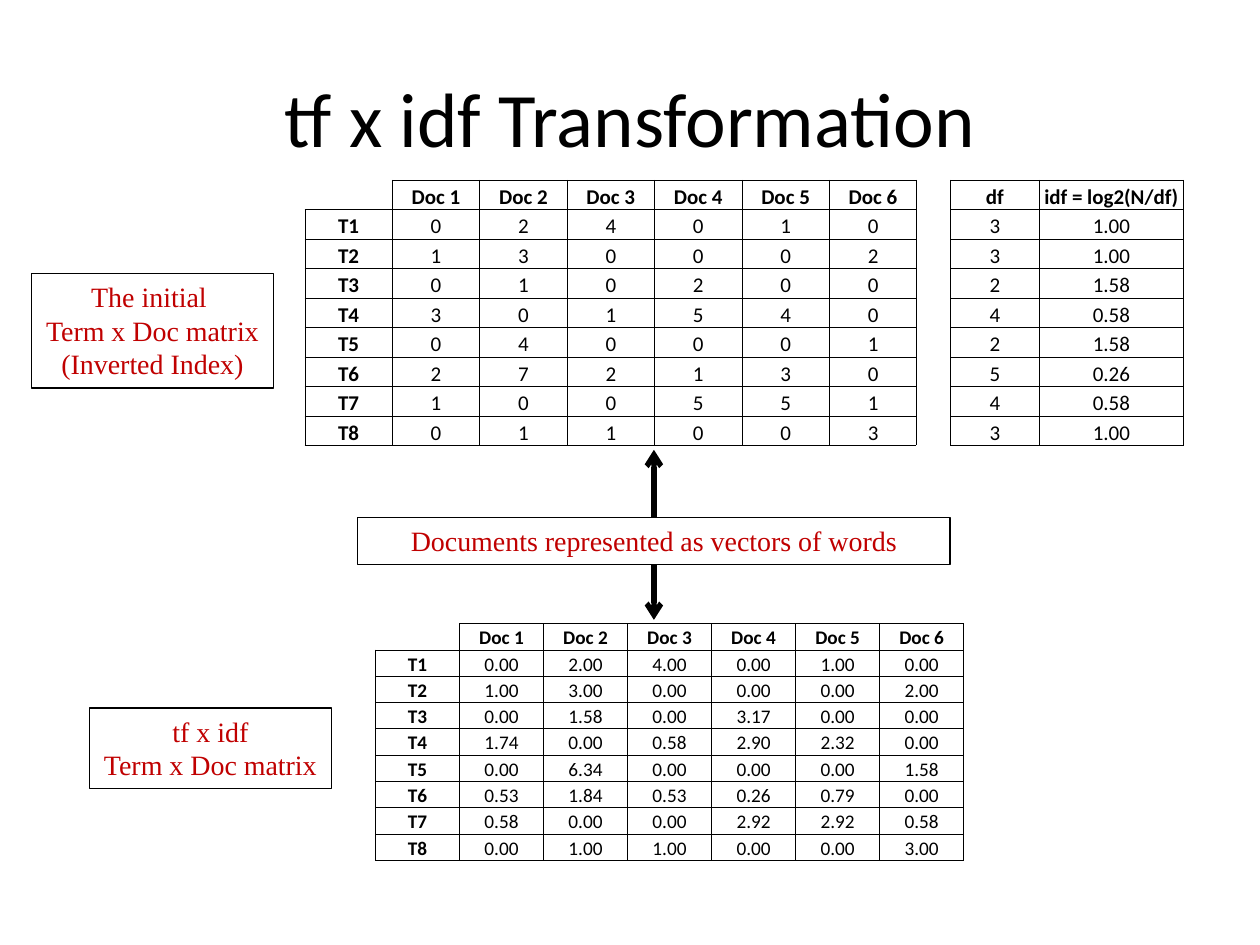
from lxml import etree
from pptx import Presentation
from pptx.dml.color import RGBColor
from pptx.enum import shapes, text
from pptx.oxml.ns import qn
from pptx.util import Inches, Pt

HUES = {"ink": "000000", "paper": "FFFFFF", "note": "C00000"}

COUNTS = """,Doc 1,Doc 2,Doc 3,Doc 4,Doc 5,Doc 6,,df,idf = log2(N/df)
T1,0,2,4,0,1,0,,3,1.00
T2,1,3,0,0,0,2,,3,1.00
T3,0,1,0,2,0,0,,2,1.58
T4,3,0,1,5,4,0,,4,0.58
T5,0,4,0,0,0,1,,2,1.58
T6,2,7,2,1,3,0,,5,0.26
T7,1,0,0,5,5,1,,4,0.58
T8,0,1,1,0,0,3,,3,1.00"""

WEIGHTS = """,Doc 1,Doc 2,Doc 3,Doc 4,Doc 5,Doc 6
T1,0.00,2.00,4.00,0.00,1.00,0.00
T2,1.00,3.00,0.00,0.00,0.00,2.00
T3,0.00,1.58,0.00,3.17,0.00,0.00
T4,1.74,0.00,0.58,2.90,2.32,0.00
T5,0.00,6.34,0.00,0.00,0.00,1.58
T6,0.53,1.84,0.53,0.26,0.79,0.00
T7,0.58,0.00,0.00,2.92,2.92,0.58
T8,0.00,1.00,1.00,0.00,0.00,3.00"""


def style(font, face, size, hue, bold=False):
    font.name, font.size, font.bold = face, Pt(size), bold
    font.color.rgb = RGBColor.from_string(HUES[hue])


def add_title(slide, box, words):
    title = slide.shapes.title
    title.left, title.top, title.width, title.height = map(Inches, box)
    frame = title.text_frame
    frame.text = words
    frame.vertical_anchor = text.MSO_ANCHOR.MIDDLE
    frame.paragraphs[0].alignment = text.PP_ALIGN.CENTER
    style(frame.paragraphs[0].runs[0].font, "Calibri", 44, "ink")


def edge_hues(row, col, last, blank):
    """Give the hue of each cell edge; None means no line."""
    hues = dict.fromkeys("LRTB", "ink")
    if blank and col == 0:
        hues.update(L="paper", T="paper")
    elif blank:
        hues.update(T=None if row else "paper",
                    B="paper" if row == last else None)
    return hues


def draw_edges(cell, hues):
    props = cell._tc.get_or_add_tcPr()
    for side, hue in hues.items():
        line = etree.SubElement(props, qn(f"a:ln{side}"), w=str(Pt(0.5)))
        if hue:
            fill = etree.SubElement(line, qn("a:solidFill"))
            etree.SubElement(fill, qn("a:srgbClr"), val=HUES[hue])
        else:
            etree.SubElement(line, qn("a:noFill"))


def fill_cell(cell, words, size, bold):
    cell.margin_left = cell.margin_right = cell.margin_top = Inches(0.01)
    cell.margin_bottom = 0
    cell.vertical_anchor = text.MSO_ANCHOR.BOTTOM
    cell.fill.background()
    para = cell.text_frame.paragraphs[0]
    para.alignment = text.PP_ALIGN.CENTER
    if words:
        para.text = words
        style(para.runs[0].font, "Calibri", size, "ink", bold)
    else:
        # Keeps the row from growing to the default text size
        etree.SubElement(para._p, qn("a:endParaRPr"), sz=str(size * 100))


def add_matrix(slide, box, data, widths, size):
    rows = [line.split(",") for line in data.splitlines()]
    last = len(rows) - 1
    table = slide.shapes.add_table(
        len(rows), len(widths), *map(Inches, box)).table
    table.first_row = table.horz_banding = False
    for col, width in zip(table.columns, widths):
        col.width = Inches(width)
    for r, row in enumerate(rows):
        table.rows[r].height = Inches(box[3] / len(rows))
        for c, words in enumerate(row):
            cell = table.cell(r, c)
            draw_edges(cell, edge_hues(r, c, last, not words))
            fill_cell(cell, words, size, r == 0 or c == 0)


def add_note(slide, box, words, wrap=False):
    note = slide.shapes.add_shape(
        shapes.MSO_SHAPE.RECTANGLE, *map(Inches, box))
    note.shadow.inherit = False
    note.fill.background()
    note.line.color.rgb = RGBColor.from_string(HUES["ink"])
    note.line.width = Pt(0.75)
    frame = note.text_frame
    frame.text = words
    frame.word_wrap = wrap
    frame.auto_size = text.MSO_AUTO_SIZE.SHAPE_TO_FIT_TEXT
    frame.vertical_anchor = text.MSO_ANCHOR.TOP
    para = frame.paragraphs[0]
    para.alignment = text.PP_ALIGN.CENTER
    for run in para.runs:
        style(run.font, "Times New Roman", 16, "note")
    return note


def add_arrow(slide, note, site, end):
    """Draw an arrow from a side of the note straight to the height end."""
    mid = note.left + note.width // 2
    start = note.top if site == 0 else note.top + note.height
    arrow = slide.shapes.add_connector(
        shapes.MSO_CONNECTOR.STRAIGHT, mid, start, mid, Inches(end))
    arrow.begin_connect(note, site)
    arrow.line.color.rgb = RGBColor.from_string(HUES["ink"])
    arrow.line.width = Pt(3)
    etree.SubElement(arrow.line._get_or_add_ln(), qn("a:tailEnd"), type="arrow")
    etree.SubElement(arrow._element.spPr, qn("a:effectLst"))


def main():
    deck = Presentation()
    deck.slide_width, deck.slide_height = Inches(10), Inches(7.5)
    slide = deck.slides.add_slide(deck.slide_layouts[5])
    add_title(slide, (0.5, 0.3, 9, 1.25), "tf x idf Transformation")
    add_matrix(slide, (2.42, 1.43, 6.98, 2.11), COUNTS,
               [0.694] * 7 + [0.27, 0.7, 1.15], 12)
    add_matrix(slide, (2.98, 4.95, 4.67, 1.88), WEIGHTS, [4.67 / 7] * 7, 11)
    add_note(slide, (0.25, 2.17, 1.92, 0.91),
             "The initial \vTerm x Doc matrix\v(Inverted Index)")
    add_note(slide, (0.71, 5.62, 1.92, 0.64), "tf x idf\vTerm x Doc matrix")
    link = add_note(slide, (2.84, 4.11, 4.7, 0.37),
                    "Documents represented as vectors of words", wrap=True)
    add_arrow(slide, link, 0, 3.57)
    add_arrow(slide, link, 2, 4.92)
    deck.save("out.pptx")


if __name__ == "__main__":
    main()
